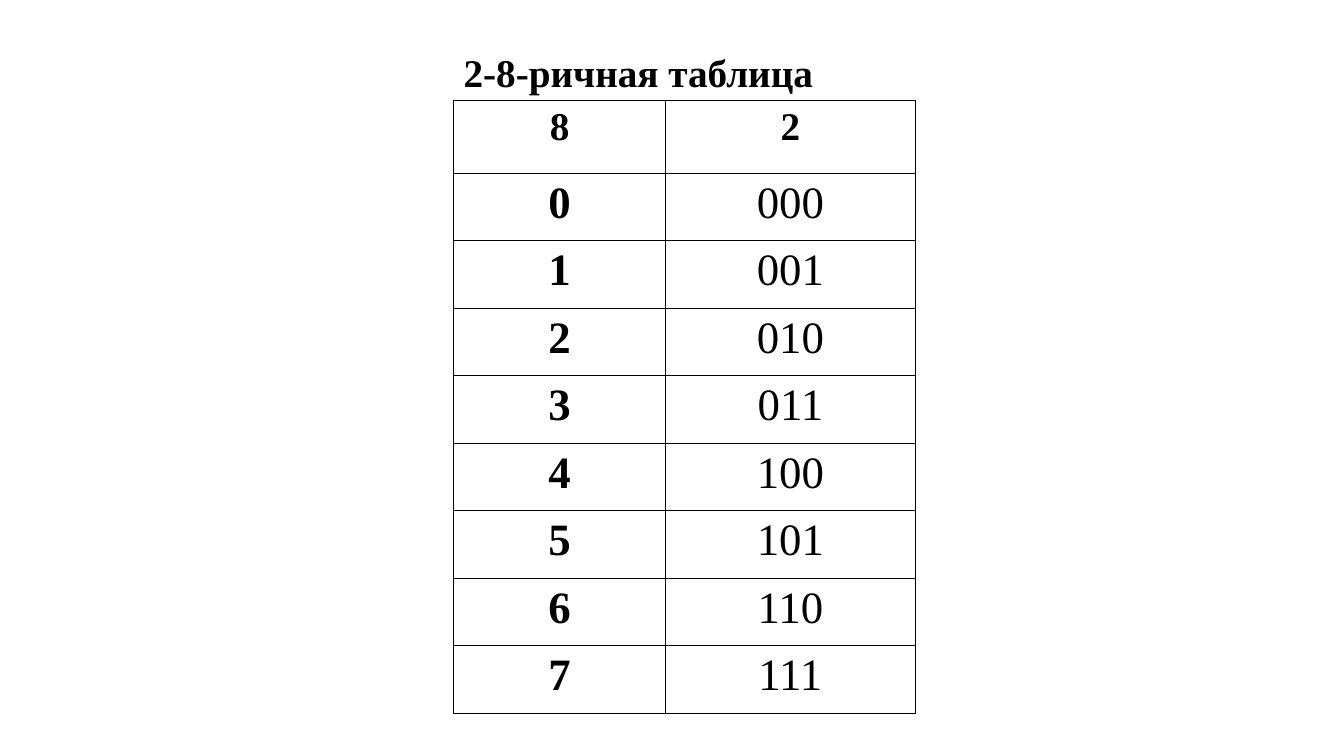
from lxml import etree
from pptx import Presentation
from pptx.dml.color import RGBColor
from pptx.enum.text import MSO_AUTO_SIZE, PP_ALIGN
from pptx.oxml.ns import qn
from pptx.util import Inches, Pt

COLORS = {"ink": "000000"}
FONT = "Times New Roman"
COL_WIDTHS = [2.1, 2.48]
HEADER_HEIGHT, ROW_HEIGHT = 0.72, 0.67


def write(tf, text, size=28, bold=False, align=PP_ALIGN.LEFT, before=0):
    p = tf.paragraphs[0]
    p.alignment = align
    p.space_before = Pt(before)
    r = p.add_run()
    r.text = text
    r.font.name = FONT
    r.font.size = Pt(size)
    r.font.bold = bold
    r.font.color.rgb = RGBColor.from_string(COLORS["ink"])


def add_borders(cell, width=1):
    tc_pr = cell._tc.get_or_add_tcPr()
    for i, side in enumerate(("lnL", "lnR", "lnT", "lnB")):
        ln = etree.Element(qn(f"a:{side}"), w=str(Pt(width)))
        fill = etree.SubElement(ln, qn("a:solidFill"))
        etree.SubElement(fill, qn("a:srgbClr"), val=COLORS["ink"])
        tc_pr.insert(i, ln)


def add_title(s, x, y, w, h):
    tf = s.shapes.add_textbox(Inches(x), Inches(y), Inches(w), Inches(h)).text_frame
    tf.word_wrap = True
    tf.auto_size = MSO_AUTO_SIZE.SHAPE_TO_FIT_TEXT
    write(tf, "2-8-ричная таблица", bold=True, before=2.5)


def add_octal_table(s, x, y):
    """Pair each octal digit with its three binary digits."""
    rows = [("8", "2")] + [(str(n), f"{n:03b}") for n in range(8)]
    heights = [HEADER_HEIGHT] + [ROW_HEIGHT] * 8
    table = s.shapes.add_table(len(rows), len(COL_WIDTHS), Inches(x), Inches(y),
                               Inches(sum(COL_WIDTHS)), Inches(sum(heights))).table
    table.first_row = table.horz_banding = False
    for col, width in zip(table.columns, COL_WIDTHS):
        col.width = Inches(width)
    for i, (values, height) in enumerate(zip(rows, heights)):
        table.rows[i].height = Inches(height)
        for j, value in enumerate(values):
            cell = table.cell(i, j)
            cell.fill.background()
            add_borders(cell)
            write(cell.text_frame, value, size=32 if i else 28,
                  bold=i == 0 or j == 0, align=PP_ALIGN.CENTER)


def main():
    prs = Presentation()
    prs.slide_width, prs.slide_height = Inches(13.33), Inches(7.5)
    s = prs.slides.add_slide(prs.slide_layouts[6])
    add_title(s, 4.5, 0.43, 3.78, 0.57)
    add_octal_table(s, 4.5, 1)
    prs.save("out.pptx")


if __name__ == "__main__":
    main()
